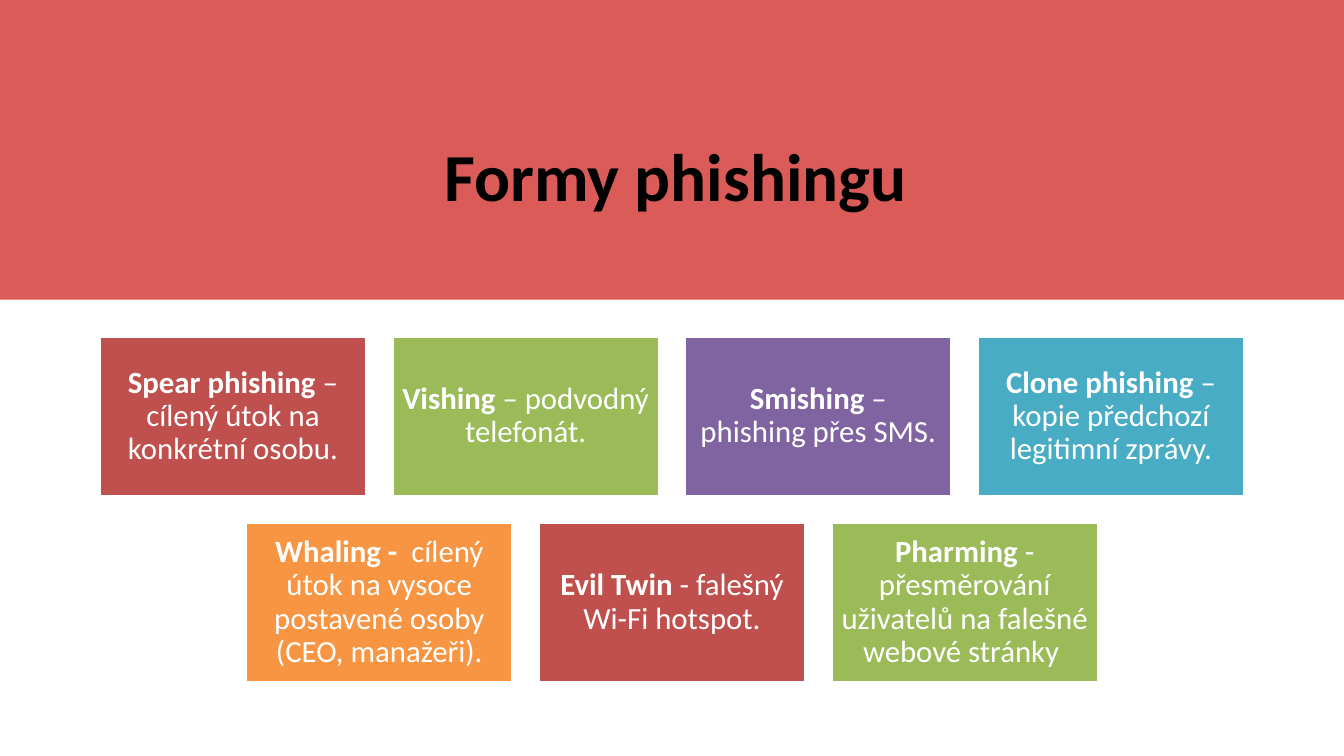
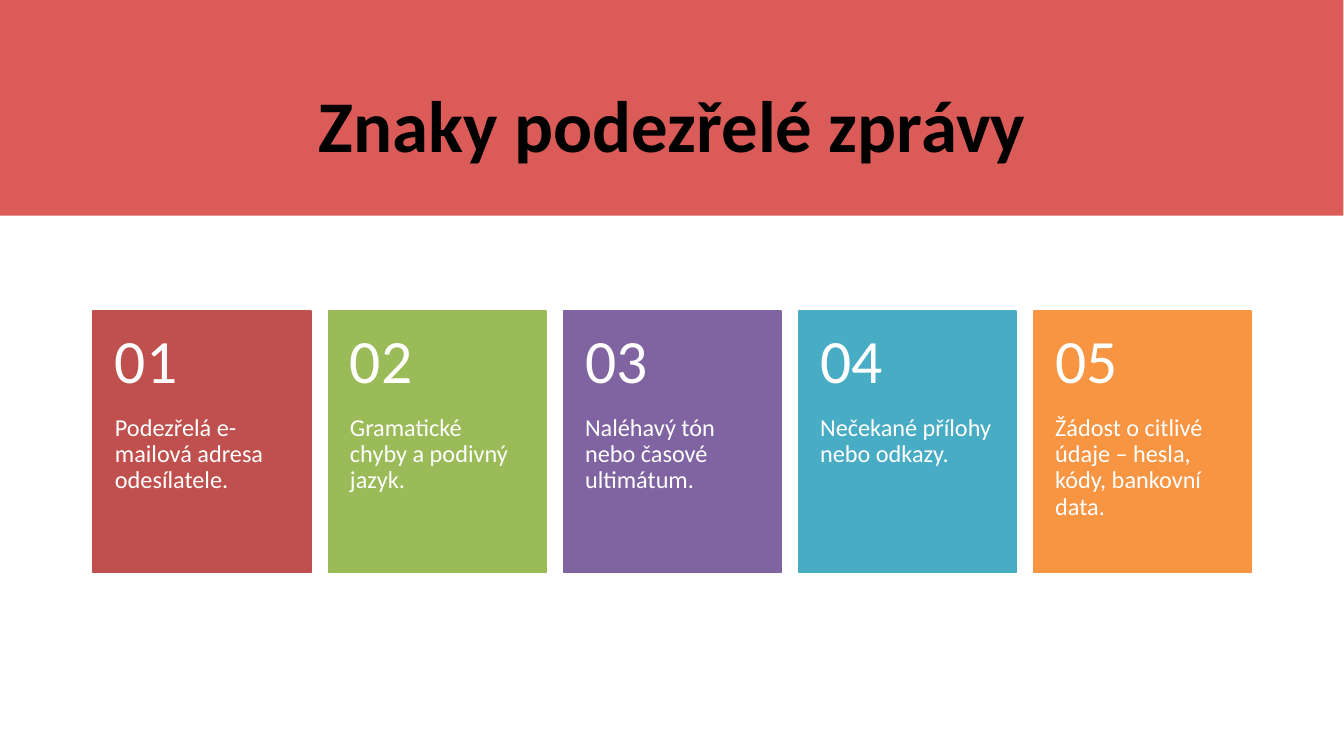
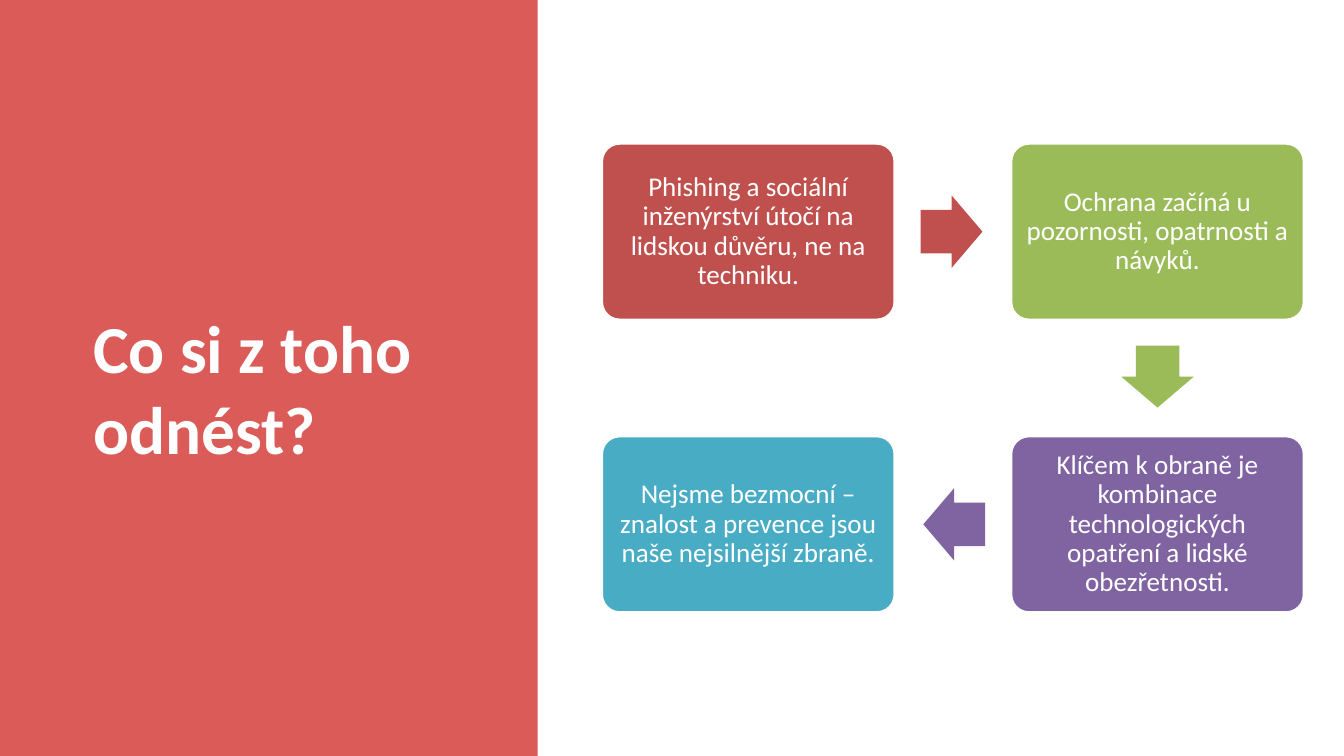
from dataclasses import dataclass
from math import atan2, cos, degrees, sin

from pptx import Presentation
from pptx.dml.color import RGBColor
from pptx.enum.shapes import MSO_SHAPE as Shape
from pptx.enum.text import MSO_ANCHOR as Anchor, MSO_AUTO_SIZE as AutoSize, PP_ALIGN as Align
from pptx.util import Inches, Pt

FONT = "Calibri"
WHITE, BLACK, BAND = "FFFFFF", "000000", "DA5B58"
RED, GREEN, PURPLE, TEAL, ORANGE = ACCENTS = ["BF504D", "9BBB59", "8064A2", "49ACC5", "F79543"]
TITLE_ONLY = 5

FORMS = [
    [("Spear phishing ", "– cílený útok na konkrétní osobu."),
     ("Vishing", " – podvodný telefonát."),
     ("Smishing", " – phishing přes SMS."),
     ("Clone phishing ", "– kopie předchozí legitimní zprávy.")],
    [("Whaling - ", " cílený útok na vysoce postavené osoby (CEO, manažeři)."),
     ("Evil Twin ", "- falešný Wi-Fi hotspot."),
     ("Pharming", " - přesměrování uživatelů na falešné webové stránky ")],
]
SIGNS = [
    "Podezřelá e-mailová adresa odesílatele.",
    "Gramatické chyby a podivný jazyk.",
    "Naléhavý tón nebo časové ultimátum.",
    "Nečekané přílohy nebo odkazy.",
    "Žádost o citlivé údaje – hesla, kódy, bankovní data.",
]
TAKEAWAYS = [
    "Phishing a sociální inženýrství útočí na lidskou důvěru, ne na techniku.",
    "Ochrana začíná u pozornosti, opatrnosti a návyků.",
    "Klíčem k obraně je kombinace technologických opatření a lidské obezřetnosti.",
    "Nejsme bezmocní – znalost a prevence jsou naše nejsilnější zbraně.",
]


@dataclass
class Box:
    left: float
    top: float
    width: float
    height: float

    def frame(self):
        return [Inches(n) for n in (self.left, self.top, self.width, self.height)]

    def center(self):
        return self.left + self.width / 2, self.top + self.height / 2

    def cell(self, column, row, columns, rows, gap):
        width = (self.width - gap * (columns - 1)) / columns
        height = (self.height - gap * (rows - 1)) / rows
        return Box(self.left + column * (width + gap), self.top + row * (height + gap), width, height)

    def split(self, share):
        upper = self.height * share
        return (Box(self.left, self.top, self.width, upper),
                Box(self.left, self.top + upper, self.width, self.height - upper))


def color(value):
    return RGBColor.from_string(value)


def add_block(page, kind, box, fill, line=None):
    block = page.shapes.add_shape(kind, *box.frame())
    block.shadow.inherit = False
    block.fill.solid()
    block.fill.fore_color.rgb = color(fill)
    if line:
        block.line.color.rgb = color(line)
        block.line.width = Pt(2)
    else:
        block.line.fill.background()
    return block


def write(holder, spans, size, ink=WHITE, align=Align.CENTER, anchor=Anchor.MIDDLE,
          insets=(0.14, 0.14, 0.14, 0.14), spacing=0.9):
    frame = holder.text_frame
    frame.word_wrap = True
    frame.auto_size = AutoSize.NONE
    frame.vertical_anchor = anchor
    frame.margin_left, frame.margin_top, frame.margin_right, frame.margin_bottom = map(Inches, insets)
    para = frame.paragraphs[0]
    para.alignment = align
    para.line_spacing = spacing
    for text, bold in spans:
        span = para.add_run()
        span.text = text
        span.font.name = FONT
        span.font.size = Pt(size)
        span.font.bold = bold
        span.font.color.rgb = color(ink)


def add_titled_page(deck, text, band_box, title_box, size, ink=BLACK, align=Align.CENTER):
    page = deck.slides.add_slide(deck.slide_layouts[TITLE_ONLY])
    title = page.shapes.title
    title.left, title.top, title.width, title.height = title_box.frame()
    write(title, [(text, True)], size, ink, align, insets=(0.1, 0.05, 0.1, 0.05), spacing=1.0)
    band = add_block(page, Shape.RECTANGLE, band_box, BAND)
    title.element.addprevious(band.element)
    return page


def add_form_tiles(page, area):
    gap, columns = 0.4, len(FORMS[0])
    number = 0
    for row, forms in enumerate(FORMS):
        indent = (columns - len(forms)) / 2
        for column, (name, meaning) in enumerate(forms):
            box = area.cell(column + indent, row, columns, len(FORMS), gap)
            tile = add_block(page, Shape.RECTANGLE, box, ACCENTS[number % len(ACCENTS)], WHITE)
            write(tile, [(name, True), (meaning, False)], 33)
            number += 1


def add_sign_cards(page, area):
    for column, (sign, accent) in enumerate(zip(SIGNS, ACCENTS)):
        box = area.cell(column, 0, len(SIGNS), 1, 0.26)
        add_block(page, Shape.RECTANGLE, box, accent, accent)
        number_box, sign_box = box.split(0.4)
        write(page.shapes.add_textbox(*sign_box.frame()), [(sign, False)], 26,
              align=Align.LEFT, anchor=Anchor.TOP, insets=(0.32, 0, 0.32, 0.36))
        write(page.shapes.add_textbox(*number_box.frame()), [(f"{column + 1:02}", False)], 66,
              align=Align.LEFT, insets=(0.32, 0.18, 0.32, 0.18))


def add_arrow(page, start, end, fill):
    (x1, y1), (x2, y2) = start.center(), end.center()
    angle = atan2(y2 - y1, x2 - x1)
    width, height, setback = 0.92, 1.08, 0.02
    x = (x1 + x2) / 2 - setback * cos(angle)
    y = (y1 + y2) / 2 - setback * sin(angle)
    arrow = add_block(page, Shape.RIGHT_ARROW, Box(x - width / 2, y - height / 2, width, height), fill)
    arrow.adjustments[0], arrow.adjustments[1] = 0.6, 0.5
    arrow.rotation = degrees(angle)


def add_takeaway_loop(page, area):
    places = [(0, 0), (1, 0), (1, 1), (0, 1)]
    boxes = [area.cell(column, row, 2, 2, 1.74) for column, row in places]
    for box, takeaway, accent in zip(boxes, TAKEAWAYS, ACCENTS):
        step = add_block(page, Shape.ROUNDED_RECTANGLE, box, accent, WHITE)
        step.adjustments[0] = 0.1
        write(step, [(takeaway, False)], 29, insets=(0.12, 0.12, 0.12, 0.12))
    for start, end, accent in zip(boxes, boxes[1:], ACCENTS):
        add_arrow(page, start, end, accent)


def main():
    deck = Presentation()
    deck.slide_width, deck.slide_height = Inches(20), Inches(11.25)

    forms = add_titled_page(deck, "Formy phishingu", Box(0, 0, 20, 4.46),
                            Box(1.71, 1.33, 16.69, 2.55), 72)
    add_form_tiles(forms, Box(1.49, 5.01, 17.02, 5.14))

    signs = add_titled_page(deck, "Znaky podezřelé zprávy", Box(0, 0, 19.99, 3.21),
                            Box(1.38, 0.91, 17.25, 1.86), 78)
    add_sign_cards(signs, Box(1.39, 4.63, 17.23, 3.89))

    takeaways = add_titled_page(deck, "Co si z toho odnést?", Box(0, 0, 8, 11.25),
                                Box(1.29, 1.38, 5.77, 8.76), 72, WHITE, Align.LEFT)
    add_takeaway_loop(takeaways, Box(8.96, 2.14, 10.44, 6.97))

    deck.save("out.pptx")


if __name__ == "__main__":
    main()
